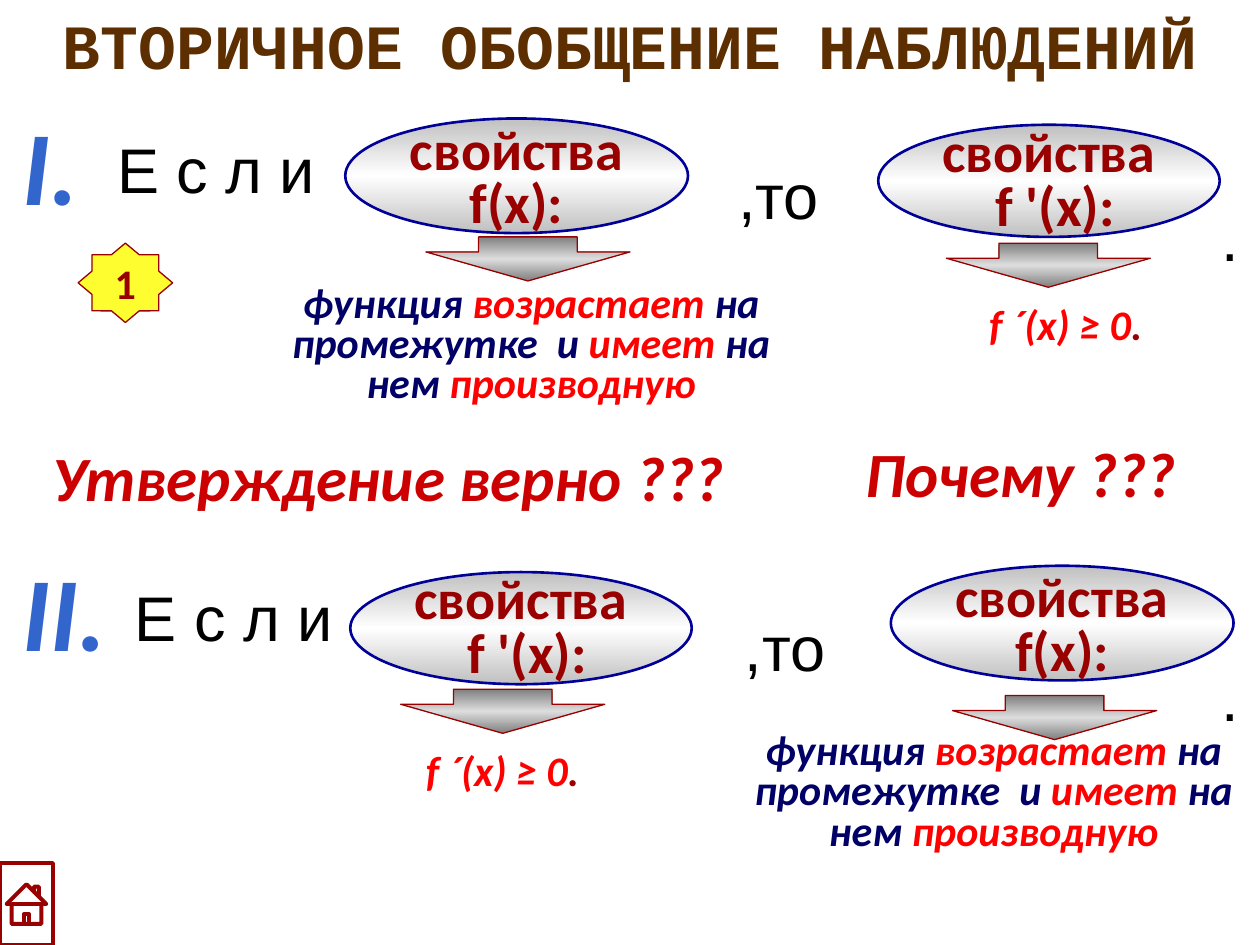
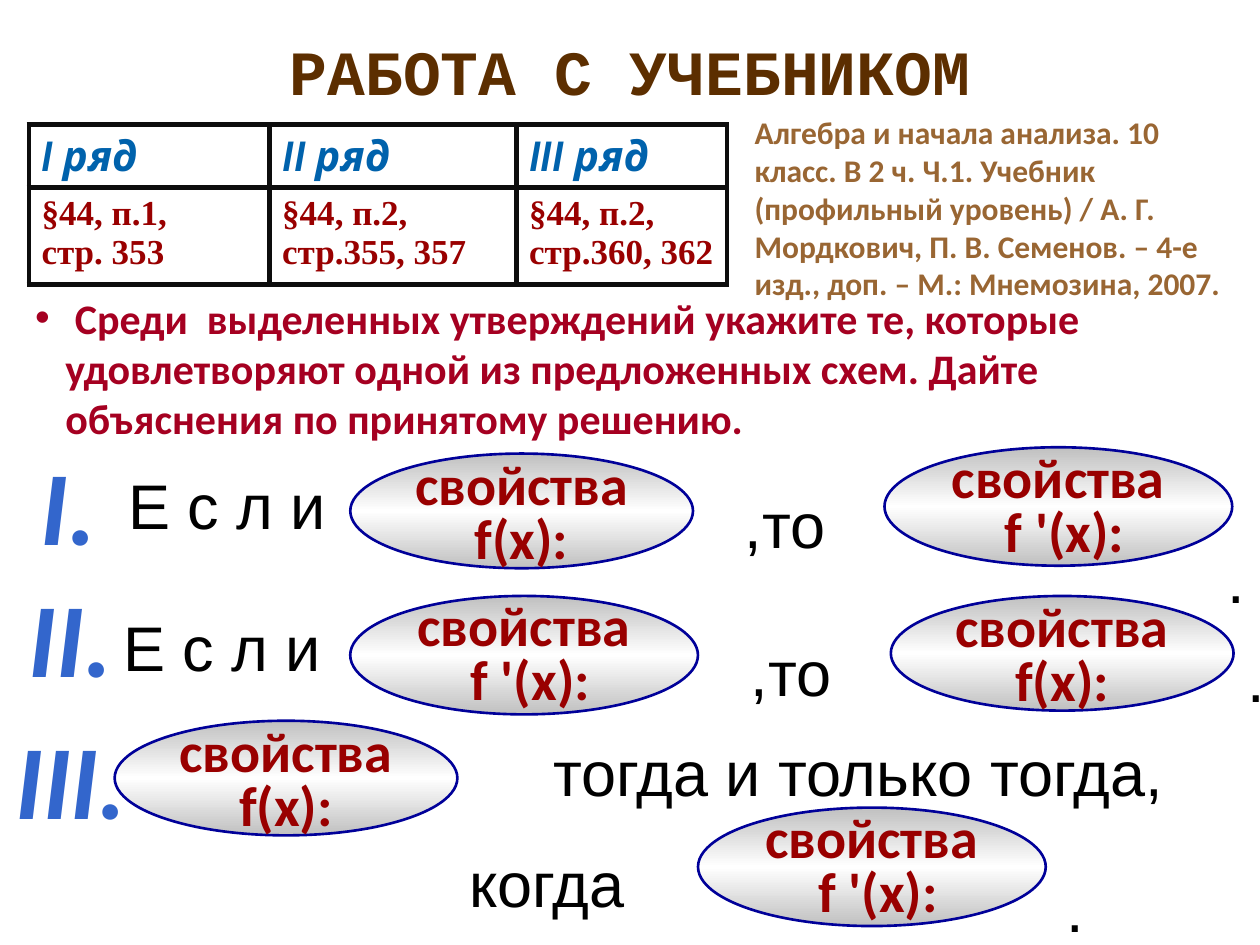
from dataclasses import dataclass
from copy import deepcopy
from typing import NamedTuple

from lxml.etree import SubElement
from pptx import Presentation
from pptx.dml.color import RGBColor
from pptx.enum.shapes import MSO_SHAPE as Preset
from pptx.enum.text import MSO_ANCHOR as Anchor, PP_ALIGN as Align
from pptx.oxml.ns import qn
from pptx.util import Inches, Pt


@dataclass(frozen=True)
class Theme:
    title: str = "5C2E00"
    word: str = "000000"
    numeral: str = "3366CC"
    dark_red: str = "990000"
    red: str = "FF0000"
    question: str = "CC0000"
    navy: str = "000066"
    oval_line: str = "000099"
    oval_edge: str = "C0C0C0"
    oval_middle: str = "FFFFFF"
    arrow_edge: str = "808080"
    arrow_middle: str = "DDDDDD"
    star: str = "FDFD2F"
    border: str = "0D0D0D"
    row_name: str = "0062AC"
    source: str = "996633"
    task: str = "A50021"
    body_font: str = "Calibri"
    title_font: str = "Courier New"
    word_font: str = "Arial"
    head_font: str = "Cabin"
    cell_font: str = "Times New Roman"
    numeral_size: int = 60
    large: int = 36
    oval_size: int = 32
    medium: int = 24
    cell_size: int = 20
    small: int = 18


THEME = Theme()


class Box(NamedTuple):
    left: float
    top: float
    width: float
    height: float

    def inside(self, left, top, width, height):
        return Box(self.left + left, self.top + top, width, height)

    def lengths(self):
        return [Inches(value) for value in self]


FUNCTION = "f(x):"
DERIVATIVE = " f '(x):"
RISING = [[("функция ", THEME.navy), ("возрастает", THEME.red),
           (" на промежутке  и ", THEME.navy), ("имеет", THEME.red),
           (" на нем ", THEME.navy), ("производную", THEME.red)]]
NON_NEGATIVE = [[("f ´(x) ≥ 0", THEME.red), (".", THEME.dark_red)]]


def write(frame, text, size=THEME.medium, font=THEME.body_font, color=THEME.dark_red,
          bold=True, italic=False, align=Align.LEFT, spacing=None, wrap=True,
          anchor=Anchor.TOP, insets=(0.1, 0.05, 0.1, 0.05)):
    frame.word_wrap = wrap
    frame.vertical_anchor = anchor
    (frame.margin_left, frame.margin_top,
     frame.margin_right, frame.margin_bottom) = map(Inches, insets)
    lines = [text] if isinstance(text, str) else text
    for index, line in enumerate(lines):
        paragraph = frame.paragraphs[0] if index == 0 else frame.add_paragraph()
        paragraph.alignment = align
        if spacing:
            paragraph.line_spacing = spacing
        for words, run_color in [(line, color)] if isinstance(line, str) else line:
            run = paragraph.add_run()
            run.text = words
            run.font.size = Pt(size)
            run.font.name = font
            run.font.bold = bold
            run.font.italic = italic
            run.font.color.rgb = RGBColor.from_string(run_color)


def add_text(slide, box, text, **style):
    frame = slide.shapes.add_textbox(*box.lengths()).text_frame
    write(frame, text, **style)
    return frame


def add_preset(slide, preset, box, line, line_width, fill=None, gradient=None, adjustments=()):
    shape = slide.shapes.add_shape(preset, *box.lengths())
    shape.shadow.inherit = False
    shape.line.color.rgb = RGBColor.from_string(line)
    shape.line.width = Pt(line_width)
    for index, value in enumerate(adjustments):
        shape.adjustments[index] = value
    if gradient:
        paint_gradient(shape, *gradient)
    elif fill:
        shape.fill.solid()
        shape.fill.fore_color.rgb = RGBColor.from_string(fill)
    else:
        shape.fill.background()
    return shape


def paint_gradient(shape, edge, middle):
    shape.fill.gradient()
    shape.fill.gradient_angle = 90
    stops = shape.element.spPr.find(qn("a:gradFill")).find(qn("a:gsLst"))
    stops.insert(1, deepcopy(stops[0]))
    for stop, position, color in zip(shape.fill.gradient_stops, (0, 0.5, 1), (edge, middle, edge)):
        stop.position = position
        stop.color.rgb = RGBColor.from_string(color)


def add_title(slide, box, text):
    add_text(slide, box, text, size=THEME.large, font=THEME.title_font, color=THEME.title,
             align=Align.CENTER, wrap=False)


def add_word(slide, box, text):
    add_text(slide, box, text, size=THEME.large, font=THEME.word_font, color=THEME.word,
             bold=False, align=Align.CENTER, wrap=False)


def add_numeral(slide, box, text):
    add_text(slide, box, text, size=THEME.numeral_size, color=THEME.numeral, italic=True,
             insets=(0, 0, 0, 0))


def add_oval(slide, box, subject):
    oval = add_preset(slide, Preset.OVAL, box, THEME.oval_line, 1.5,
                      gradient=(THEME.oval_edge, THEME.oval_middle))
    top_inset = 0.13 if subject == FUNCTION else 0.09
    write(oval.text_frame, ["свойства", subject], size=THEME.oval_size, align=Align.CENTER,
          spacing=0.8, wrap=False, anchor=Anchor.MIDDLE, insets=(0.1, top_inset, 0.1, 0.05))


def add_arrow(slide, left, top):
    add_preset(slide, Preset.DOWN_ARROW, Box(left, top, 1.62, 0.35), THEME.dark_red, 0.75,
               gradient=(THEME.arrow_edge, THEME.arrow_middle), adjustments=(0.483, 0.659))


def add_property(slide, box, text, align=Align.LEFT, spacing=None):
    add_text(slide, box, text, italic=True, align=align, spacing=spacing, insets=(0, 0, 0, 0))


def add_rising(slide, left, top):
    add_property(slide, Box(left, top, 4.23, 0.96), RISING, Align.CENTER, 0.8)


def add_non_negative(slide, left, top):
    add_property(slide, Box(left, top, 1.4, 0.4), NON_NEGATIVE)


def add_implication(slide, row, numeral, subjects, ovals, numeral_at, if_at, then_at, dot_at):
    add_numeral(slide, row.inside(*numeral_at, 0.37 + 0.2 * len(numeral.strip(".")), 1), numeral)
    add_word(slide, row.inside(*if_at, 1.79, 0.67), "Е с л и")
    add_word(slide, row.inside(*then_at, 1.48, 0.49), ",то")
    add_word(slide, row.inside(*dot_at, 0.16, 0.24), ".")
    for subject, oval in zip(subjects, ovals):
        add_oval(slide, row.inside(*oval), subject)


def add_equivalence(slide, row):
    add_numeral(slide, row.inside(0.12, 0, 0.94, 1), "III.")
    add_oval(slide, row.inside(0.91, 0.05, 2.72, 0.91), FUNCTION)
    add_word(slide, row.inside(3.62, 0.1, 6.38, 0.67), "тогда и только тогда,")
    add_word(slide, row.inside(3.33, 0.98, 2.02, 0.67), "когда")
    add_oval(slide, row.inside(5.54, 0.74, 2.76, 0.94), DERIVATIVE)
    add_word(slide, row.inside(8.4, 1.18, 0.16, 0.24), ".")


def border_cell(cell):
    properties = cell._tc.get_or_add_tcPr()
    for index, side in enumerate(("lnL", "lnR", "lnT", "lnB")):
        line = properties.makeelement(qn(f"a:{side}"), {"w": str(Pt(3))})
        fill = SubElement(line, qn("a:solidFill"))
        SubElement(fill, qn("a:srgbClr"), val=THEME.border)
        properties.insert(index, line)


def add_assignments(slide, box):
    rows = [["I ряд", "II ряд", "III ряд"],
            [["§44, п.1,", "стр. 353"], ["§44, п.2,", "стр.355, 357"],
             ["§44, п.2,", "стр.360, 362"]]]
    styles = [dict(font=THEME.head_font, color=THEME.row_name, italic=True),
              dict(font=THEME.cell_font, size=THEME.cell_size)]
    table = slide.shapes.add_table(2, 3, *box.lengths()).table
    for column, width in zip(table.columns, (1.91, 1.96, 1.67)):
        column.width = Inches(width)
    for row, height, texts, style in zip(table.rows, (0.5, box.height - 0.5), rows, styles):
        row.height = Inches(height)
        for cell, text in zip(row.cells, texts):
            cell.fill.background()
            write(cell.text_frame, text, **style)
            border_cell(cell)


def add_task(slide, box):
    task = ("Среди  выделенных утверждений укажите те, которые удовлетворяют одной "
            "из предложенных схем. Дайте объяснения по принятому решению.")
    frame = add_text(slide, box, " " + task, color=THEME.task)
    properties = frame.paragraphs[0]._p.get_or_add_pPr()
    properties.set("marL", str(Inches(0.24)))
    properties.set("indent", str(-Inches(0.24)))
    SubElement(properties, qn("a:buFont"), typeface=THEME.word_font)
    SubElement(properties, qn("a:buChar"), char="•")


def build_generalization(slide):
    add_title(slide, Box(0.2, 0, 9.6, 0.75), "ВТОРИЧНОЕ ОБОБЩЕНИЕ НАБЛЮДЕНИЙ")
    add_implication(slide, Box(0, 0.8, 10, 2.5), "I.", (FUNCTION, DERIVATIVE),
                    ((2.74, 0.14, 2.72, 0.91), (6.97, 0.19, 2.71, 0.89)),
                    (0.18, 0), (0.82, 0.19), (5.44, 0.39), (9.63, 0.73))
    add_implication(slide, Box(0, 4.34, 10, 2.5), "II.", (DERIVATIVE, FUNCTION),
                    ((2.78, 0.2, 2.71, 0.89), (7.07, 0.15, 2.72, 0.91)),
                    (0.18, 0), (0.96, 0.2), (5.49, 0.44), (9.63, 0.84))
    for left, top in ((3.38, 1.88), (7.51, 1.93), (3.18, 5.47), (7.56, 5.52)):
        add_arrow(slide, left, top)
    add_rising(slide, 2.1, 2.27)
    add_non_negative(slide, 7.85, 2.37)
    add_non_negative(slide, 3.38, 5.91)
    add_rising(slide, 5.77, 5.82)
    star = add_preset(slide, Preset.STAR_8_POINT, Box(0.62, 1.93, 0.75, 0.63), THEME.dark_red,
                      0.75, fill=THEME.star, adjustments=(0.383,))
    write(star.text_frame, "1", align=Align.CENTER, wrap=False, anchor=Anchor.MIDDLE)
    for box, question in ((Box(0.32, 3.43, 6.4, 0.7), "Утверждение верно ???"),
                          (Box(6.77, 3.4, 3.05, 0.7), "Почему ???")):
        add_text(slide, box, question, size=THEME.large, color=THEME.question, italic=True)
    add_preset(slide, Preset.ACTION_BUTTON_HOME, Box(0, 6.85, 0.42, 0.65), THEME.dark_red, 2.25)


def build_textbook_work(slide):
    add_title(slide, Box(1.95, 0.21, 6.1, 0.5), "РАБОТА С УЧЕБНИКОМ")
    add_assignments(slide, Box(0.23, 0.99, 5.54, 1.27))
    add_text(slide, Box(5.89, 0.85, 4.11, 1.6),
             "Алгебра и начала анализа. 10 класс. В 2 ч. Ч.1. Учебник (профильный уровень) / "
             "А. Г. Мордкович, П. В. Семенов. – 4-е изд., доп. – М.: Мнемозина, 2007.",
             size=THEME.small, color=THEME.source)
    add_task(slide, Box(0.18, 2.27, 9.55, 1.3))
    add_implication(slide, Box(0, 3.5, 10, 1), "I.", (FUNCTION, DERIVATIVE),
                    ((2.78, 0.1, 2.72, 0.91), (7.02, 0.05, 2.76, 0.94)),
                    (0.32, 0), (0.91, 0.15), (5.49, 0.3), (9.68, 0.74))
    add_implication(slide, Box(0, 4.54, 10, 1), "II.", (DERIVATIVE, FUNCTION),
                    ((2.78, 0.19, 2.76, 0.94), (7.07, 0.19, 2.72, 0.91)),
                    (0.23, 0), (0.87, 0.24), (5.54, 0.44), (9.84, 0.49))
    add_equivalence(slide, Box(0, 5.67, 10, 1.83))


def main():
    presentation = Presentation()
    presentation.slide_width = Inches(10)
    presentation.slide_height = Inches(7.5)
    for build in (build_generalization, build_textbook_work):
        build(presentation.slides.add_slide(presentation.slide_layouts[6]))
    presentation.save("out.pptx")


if __name__ == "__main__":
    main()
